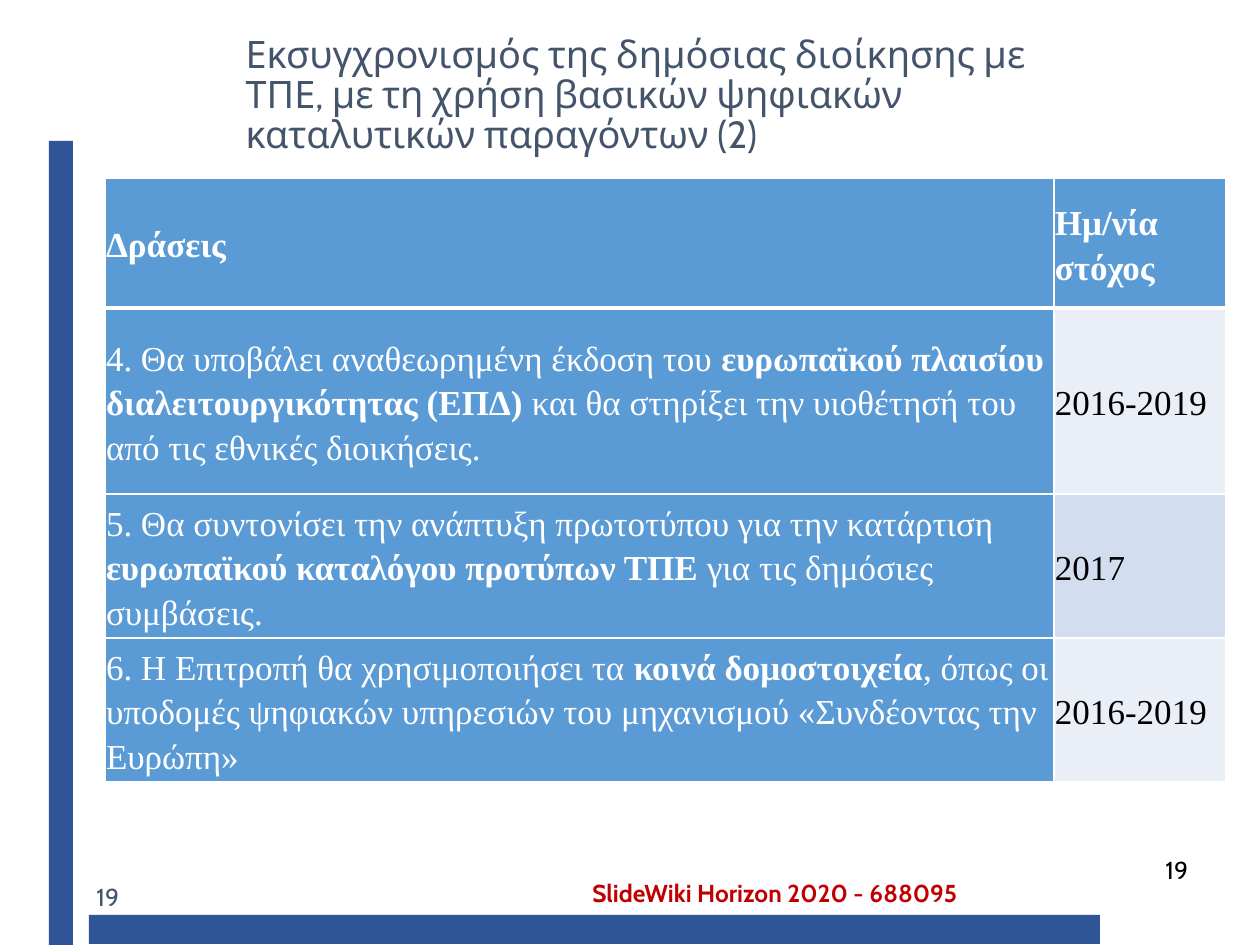
from dataclasses import dataclass

from lxml.etree import SubElement
from pptx import Presentation
from pptx.dml.color import RGBColor
from pptx.enum.shapes import MSO_SHAPE
from pptx.enum.text import MSO_ANCHOR, MSO_AUTO_SIZE, PP_ALIGN
from pptx.oxml.ns import qn
from pptx.util import Emu, Pt


@dataclass(frozen=True)
class Theme:
    bar: str = "2F5597"
    heading: str = "44546A"
    accent: str = "C00000"
    table: str = "5B9BD5"
    bands: tuple = ("EAEFF7", "D2DEEF")
    light: str = "FFFFFF"
    dark: str = "000000"
    font: str = "Cabin"
    table_font: str = "Times New Roman"
    title_size: float = 21.6
    table_size: float = 20
    small_size: float = 14


THEME = Theme()
EMU_PER_PX = 914400 / 126

TITLE = ("Εκσυγχρονισμός της δημόσιας διοίκησης με ΤΠΕ, με τη χρήση "
         "βασικών ψηφιακών καταλυτικών παραγόντων (2)")
TITLE_BOX = (233, 26, 824, 141)
BARS = [(49, 141, 24, 804), (89, 915, 1011, 29)]
# text, box, colour, bold
LABELS = [
    ("SlideWiki Horizon 2020 -\u00a0688095", (580, 872, 459, 43), THEME.accent, True),
    ("19", (84, 876, 129, 50), THEME.heading, False),
    ("19", (1153, 849, 96, 55), THEME.dark, False),
]

HEADER = ("Δράσεις", "Ημ/νία στόχος")
# plain start, bold phrase, plain end, target date
ACTIONS = [
    ("4. Θα υποβάλει αναθεωρημένη έκδοση του ",
     "ευρωπαϊκού πλαισίου διαλειτουργικότητας (ΕΠΔ) ",
     "και θα στηρίξει την υιοθέτησή του από τις εθνικές διοικήσεις.", "2016-2019"),
    ("5. Θα συντονίσει την ανάπτυξη πρωτοτύπου για την κατάρτιση ",
     "ευρωπαϊκού καταλόγου προτύπων ΤΠΕ ",
     "για τις δημόσιες συμβάσεις.", "2017"),
    ("6. Η Επιτροπή θα χρησιμοποιήσει τα ",
     "κοινά δομοστοιχεία",
     ", όπως οι υποδομές ψηφιακών υπηρεσιών του μηχανισμού «Συνδέοντας την Ευρώπη»",
     "2016-2019"),
]
TABLE_ORIGIN = (105, 178)
COLUMN_WIDTHS = (949, 172)
ROW_HEIGHTS = (130, 186, 144, 144)


def px(value):
    return Emu(round(value * EMU_PER_PX))


def box(values):
    return [px(value) for value in values]


def add_run(paragraph, text, font, size, color, bold=False):
    run = paragraph.add_run()
    run.text = text
    run.font.name = font
    run.font.size = Pt(size)
    run.font.bold = bold
    run.font.color.rgb = RGBColor.from_string(color)


def set_borders(cell, top, bottom):
    properties = cell._tc.get_or_add_tcPr()
    for index, (tag, width) in enumerate(
            [("a:lnL", 1), ("a:lnR", 1), ("a:lnT", top), ("a:lnB", bottom)]):
        line = SubElement(properties, qn(tag), w=str(Pt(width)))
        fill = SubElement(line, qn("a:solidFill"))
        SubElement(fill, qn("a:srgbClr"), val=THEME.light)
        properties.insert(index, line)


def fill_cell(cell, runs, fill, color):
    cell.fill.solid()
    cell.fill.fore_color.rgb = RGBColor.from_string(fill)
    cell.vertical_anchor = MSO_ANCHOR.MIDDLE
    cell.margin_left = cell.margin_right = px(1)
    cell.margin_top = cell.margin_bottom = px(1)
    paragraph = cell.text_frame.paragraphs[0]
    paragraph.line_spacing = 1.15
    paragraph.space_after = Pt(10)
    for text, bold in runs:
        add_run(paragraph, text, THEME.table_font, THEME.table_size, color, bold)


def add_bar(slide, position):
    bar = slide.shapes.add_shape(MSO_SHAPE.RECTANGLE, *box(position))
    bar.shadow.inherit = False
    bar.fill.solid()
    bar.fill.fore_color.rgb = RGBColor.from_string(THEME.bar)
    bar.line.fill.background()


def add_label(slide, text, position, color, bold):
    frame = slide.shapes.add_textbox(*box(position)).text_frame
    frame.word_wrap = True
    add_run(frame.paragraphs[0], text, THEME.font, THEME.small_size, color, bold)


def format_title(title):
    title.left, title.top, title.width, title.height = box(TITLE_BOX)
    frame = title.text_frame
    frame.word_wrap = True
    frame.auto_size = MSO_AUTO_SIZE.NONE
    frame.vertical_anchor = MSO_ANCHOR.MIDDLE
    paragraph = frame.paragraphs[0]
    paragraph.alignment = PP_ALIGN.LEFT
    paragraph.line_spacing = 0.89
    paragraph.space_before = Pt(0)
    add_run(paragraph, TITLE, THEME.font, THEME.title_size, THEME.heading)


def add_actions_table(slide):
    size = (sum(COLUMN_WIDTHS), sum(ROW_HEIGHTS))
    table = slide.shapes.add_table(
        len(ROW_HEIGHTS), len(COLUMN_WIDTHS), *box(TABLE_ORIGIN + size)).table
    for column, width in zip(table.columns, COLUMN_WIDTHS):
        column.width = px(width)
    for row, height in zip(table.rows, ROW_HEIGHTS):
        row.height = px(height)

    for column, text in enumerate(HEADER):
        fill_cell(table.cell(0, column), [(text, True)], THEME.table, THEME.light)
    for row, (start, phrase, end, date) in enumerate(ACTIONS, start=1):
        action = [(start, False), (phrase, True), (end, False)]
        band = THEME.bands[(row - 1) % 2]
        fill_cell(table.cell(row, 0), action, THEME.table, THEME.light)
        fill_cell(table.cell(row, 1), [(date, False)], band, THEME.dark)

    for index, row in enumerate(table.rows):
        for cell in row.cells:
            set_borders(cell, top=3 if index == 1 else 1, bottom=3 if index == 0 else 1)


def main():
    presentation = Presentation()
    presentation.slide_width, presentation.slide_height = px(1260), px(945)
    slide = presentation.slides.add_slide(presentation.slide_layouts[5])
    for position in BARS:
        add_bar(slide, position)
    format_title(slide.shapes.title)
    add_actions_table(slide)
    for label in LABELS:
        add_label(slide, *label)
    presentation.save("out.pptx")


if __name__ == "__main__":
    main()
